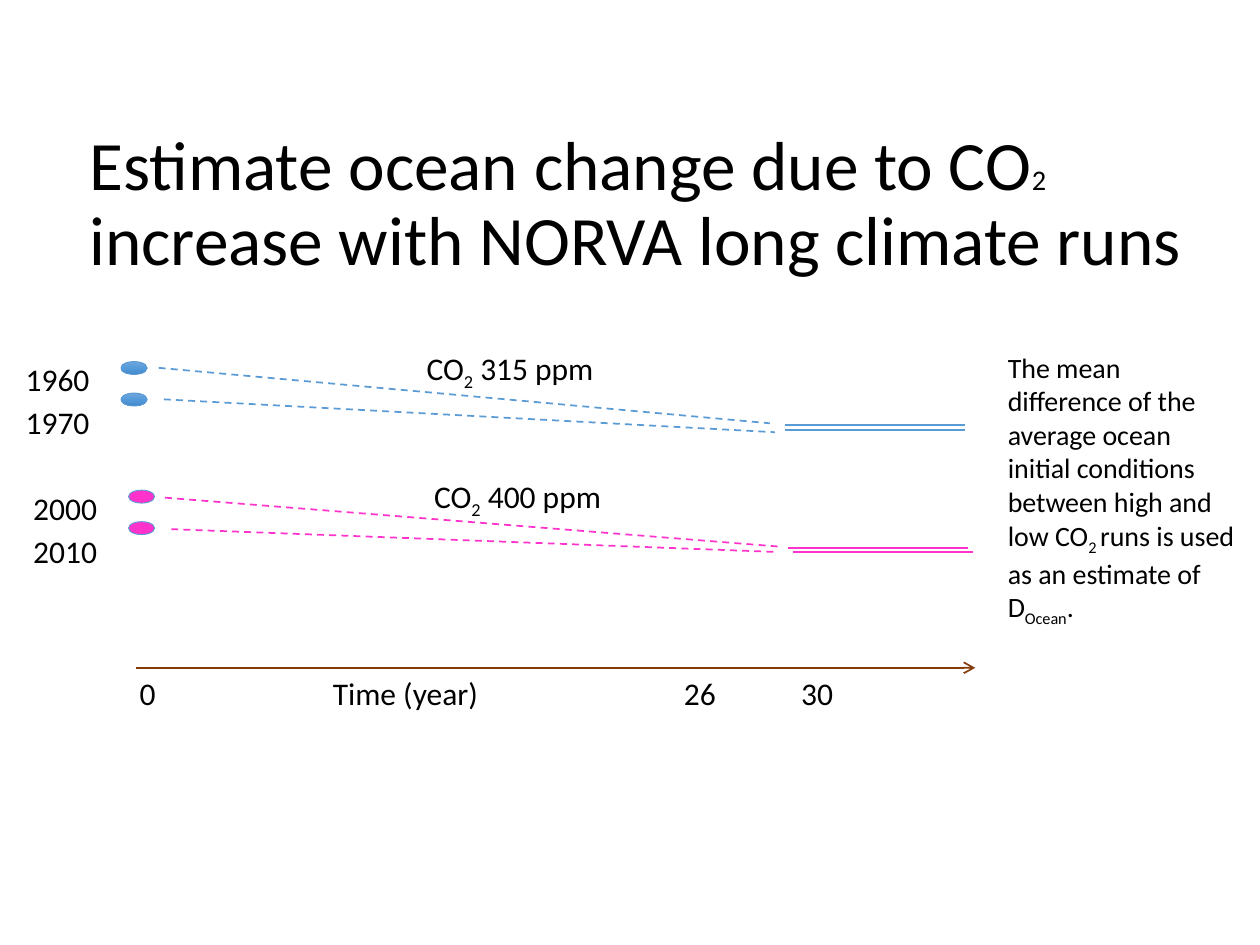
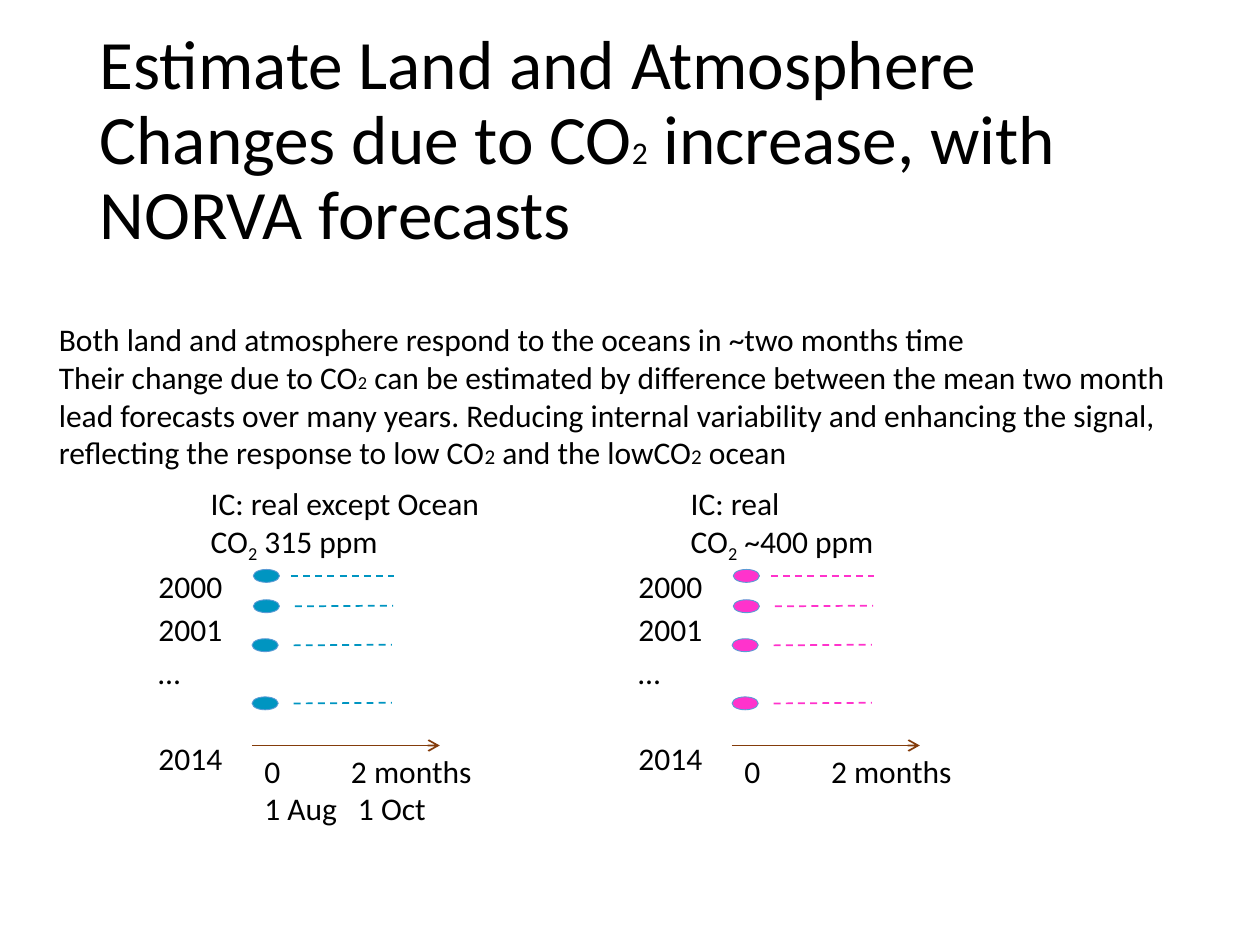
import copy
import pptx
import pptx.dml.color
import pptx.enum.dml
import pptx.enum.shapes
import pptx.enum.text
import pptx.oxml.ns
import pptx.util

FONT = "Calibri"
BLACK = pptx.dml.color.RGBColor(0x00, 0x00, 0x00)
BLUE = pptx.dml.color.RGBColor(0x5B, 0x9B, 0xD5)
BLUE_TOP = pptx.dml.color.RGBColor(0x71, 0xA6, 0xDB)
BLUE_MIDDLE = pptx.dml.color.RGBColor(0x55, 0x9B, 0xDB)
BLUE_BOTTOM = pptx.dml.color.RGBColor(0x44, 0x8A, 0xCA)
TEAL = pptx.dml.color.RGBColor(0x00, 0x95, 0xC1)
PINK = pptx.dml.color.RGBColor(0xFF, 0x33, 0xCC)
BROWN = pptx.dml.color.RGBColor(0x84, 0x3C, 0x0B)

TITLE_SIZE = 39.6
TEXT_SIZE = 18
YEAR_SPACING = 1.14
SUBSCRIPT = "-25000"
DOT_WIDTH, DOT_HEIGHT = 15, 7.4


def write(shape, place, paragraphs, size=TEXT_SIZE, spacing=None):
    """Place a shape and fill it; a run is (text, size, baseline), the last two optional."""
    shape.left, shape.top, shape.width, shape.height = [pptx.util.Pt(n) for n in place]
    frame = shape.text_frame
    frame.word_wrap = True
    frame.auto_size = pptx.enum.text.MSO_AUTO_SIZE.NONE
    for index, runs in enumerate(paragraphs):
        para = frame.add_paragraph() if index else frame.paragraphs[0]
        para.alignment = pptx.enum.text.PP_ALIGN.LEFT
        if spacing:
            para.line_spacing = spacing
        for text, *style in runs:
            span = para.add_run()
            span.text = text
            span.font.name = FONT
            span.font.size = pptx.util.Pt(style[0] if style else size)
            span.font.color.rgb = BLACK
            if len(style) > 1:
                span._r.get_or_add_rPr().set("baseline", style[1])
    return frame


def draw_line(page, start, end, color, dashed=False, arrow=False):
    line = page.shapes.add_connector(
        pptx.enum.shapes.MSO_CONNECTOR.STRAIGHT, *[pptx.util.Pt(n) for n in start + end])
    line.line.color.rgb = color
    line.line.width = pptx.util.Pt(1)
    if dashed:
        line.line.dash_style = pptx.enum.dml.MSO_LINE.DASH
    properties = line._element.spPr
    if arrow:
        properties.find(pptx.oxml.ns.qn("a:ln")).append(
            properties.makeelement(pptx.oxml.ns.qn("a:tailEnd"), {"type": "arrow"}))
    properties.append(properties.makeelement(pptx.oxml.ns.qn("a:effectLst"), {}))


deck = pptx.Presentation()
deck.slide_width, deck.slide_height = pptx.util.Pt(720), pptx.util.Pt(540)

# Titles of both slides
titles = [
    ((43.9, 83.5, 648.7, 67.7),
     [("Estimate ocean change due to CO",), ("2", 16.2),
      (" increase with NORVA long climate runs",)]),
    ((49.7, 28.8, 620.6, 104.4),
     [("Estimate Land and Atmosphere Changes due to CO",), ("2", 18),
      (" increase, with NORVA forecasts",)]),
]
for place, runs in titles:
    page = deck.slides.add_slide(deck.slide_layouts[5])
    frame = write(page.shapes.title, place, [runs], TITLE_SIZE, 0.9)
    frame.vertical_anchor = pptx.enum.text.MSO_ANCHOR.MIDDLE
ocean_page, land_page = deck.slides
dots = []       # page, left, top, color
tabbed = []     # paragraph, tab positions

# Ocean slide: one group per CO2 level
ocean_runs = [
    (BLUE, 69.1, 206.6, ["1960", "1970"], " 315 ppm",
     [((90.7, 210.2), (439.9, 241.9)), ((93.6, 228.2), (442.8, 247))],
     [(448.6, 242.8), (448.6, 245.7)]),
    (PINK, 73.4, 280.1, ["2000", "2010"], " 400 ppm",
     [((94.3, 284.4), (447.1, 312.5)), ((97.9, 302.4), (442.8, 315.4))],
     [(450, 313.2), (452.9, 315.4)]),
]
for color, left, top, years, level, drifts, means in ocean_runs:
    dots += [(ocean_page, left, top + step, color) for step in (0, 18)]
    for start, end in drifts:
        draw_line(ocean_page, start, end, color, dashed=True)
    for x, y in means:
        draw_line(ocean_page, (x, y), (x + 103, y), color)
    write(ocean_page.shapes.add_textbox(0, 0, 0, 0), (left - 61.5, top - 7.2, 57.6, 56.9),
          [[(year,)] for year in years], spacing=YEAR_SPACING)
    write(ocean_page.shapes.add_textbox(0, 0, 0, 0), (left + 167.6, top - 10.8, 124.6, 28.8),
          [[("CO",), ("2", TEXT_SIZE, SUBSCRIPT), (level,)]])

# Ocean slide: time axis and explanation
draw_line(ocean_page, (77.8, 381.6), (557.3, 381.6), BROWN, arrow=True)
frame = write(ocean_page.shapes.add_textbox(0, 0, 0, 0), (72.7, 381.6, 492.5, 28.8),
              [[("0\tTime (year)\t26\t30",)]])
tabbed.append((frame.paragraphs[0], [110.4, 311, 378]))
write(ocean_page.shapes.add_textbox(0, 0, 0, 0), (568.8, 196.6, 145.4, 162),
      [[("The mean difference of the average ocean initial conditions "
         "between high and low CO",), ("2 ", 16, SUBSCRIPT),
        ("runs is used as an estimate of D",), ("Ocean", 16, SUBSCRIPT), (".",)]], 16)

# Land slide: explanation
write(land_page.shapes.add_textbox(0, 0, 0, 0), (26.6, 179.3, 666.7, 94.3), [
    [("Both land and atmosphere respond to the oceans in ~two months time",)],
    [("Their change due to CO",), ("2", 10.5),
     (" can be estimated by difference between the mean two month lead forecasts "
      "over many years. Reducing internal variability and enhancing the signal, "
      "reflecting the response to low CO",), ("2", 12),
     (" and the lowCO",), ("2", 12), (" ocean",)],
])

# Land slide: two forecast panels
forecasts = [(0.7, 325.4, 22.3, 0), (0.7, 342.7, 24.5, 0.4),
             (0, 365, 23.8, 0.4), (0, 398.2, 23.8, 0.4)]
panels = [
    (144, TEAL, "IC: real except Ocean", " 315 ppm", ["0\t2 months", "1 Aug\t1 Oct"]),
    (418.3, PINK, "IC: real", " ~400 ppm", ["0\t2 months"]),
]
for left, color, condition, level, axis_labels in panels:
    for shift, top, dash_left, rise in forecasts:
        dots.append((land_page, left + shift, top, color))
        dash_right = 81.4 if rise == 0 else dash_left + 56.1
        draw_line(land_page, (left + dash_left, top + 3.8),
                  (left + dash_right, top + 3.8 - rise), color, dashed=True)
    frame = write(land_page.shapes.add_textbox(0, 0, 0, 0), (left - 60.5, 317.5, 57.6, 131.8),
                  [[(year,)] for year in ("2000", "2001", "…", "2014")],
                  spacing=YEAR_SPACING)
    frame.paragraphs[-1].space_before = pptx.util.Pt(24.6)
    write(land_page.shapes.add_textbox(0, 0, 0, 0), (left - 30.7, 272.9, 190, 51.1),
          [[(condition,)], [("CO",), ("2", TEXT_SIZE, SUBSCRIPT), (level,)]])
    draw_line(land_page, (left, 426), (left + 107.3, 426), BROWN, arrow=True)
    frame = write(land_page.shapes.add_textbox(0, 0, 0, 0),
                  (left, 426, 151.2, 7.2 + 22 * len(axis_labels)),
                  [[(label,)] for label in axis_labels])
    tabbed += [(para, [stop]) for para, stop in zip(frame.paragraphs, (49.5, 53.5))]

# Tab stops of the axis labels
for para, stops in tabbed:
    properties = para._p.get_or_add_pPr()
    tab_list = properties.makeelement(pptx.oxml.ns.qn("a:tabLst"), {})
    for stop in stops:
        tab_list.append(properties.makeelement(
            pptx.oxml.ns.qn("a:tab"), {"pos": str(int(pptx.util.Pt(stop))), "algn": "l"}))
    properties.append(tab_list)

# Starting-state dots; the blue ones are shaded from top to bottom
for page, left, top, color in dots:
    place = [pptx.util.Pt(n) for n in (left, top, DOT_WIDTH, DOT_HEIGHT)]
    dot = page.shapes.add_shape(pptx.enum.shapes.MSO_SHAPE.OVAL, *place)
    dot.shadow.inherit = False
    dot.line.color.rgb = BLUE
    dot.line.width = pptx.util.Pt(0.5)
    if color == BLUE:
        dot.fill.gradient()
        dot.fill.gradient_angle = 270
        stop_list = dot._element.spPr.find(".//" + pptx.oxml.ns.qn("a:gsLst"))
        stop_list.insert(1, copy.deepcopy(stop_list[0]))
        shades = zip(dot.fill.gradient_stops, (0, 0.5, 1),
                     (BLUE_TOP, BLUE_MIDDLE, BLUE_BOTTOM))
        for stop, position, shade in shades:
            stop.position = position
            stop.color.rgb = shade
    else:
        dot.fill.solid()
        dot.fill.fore_color.rgb = color

deck.save("out.pptx")
